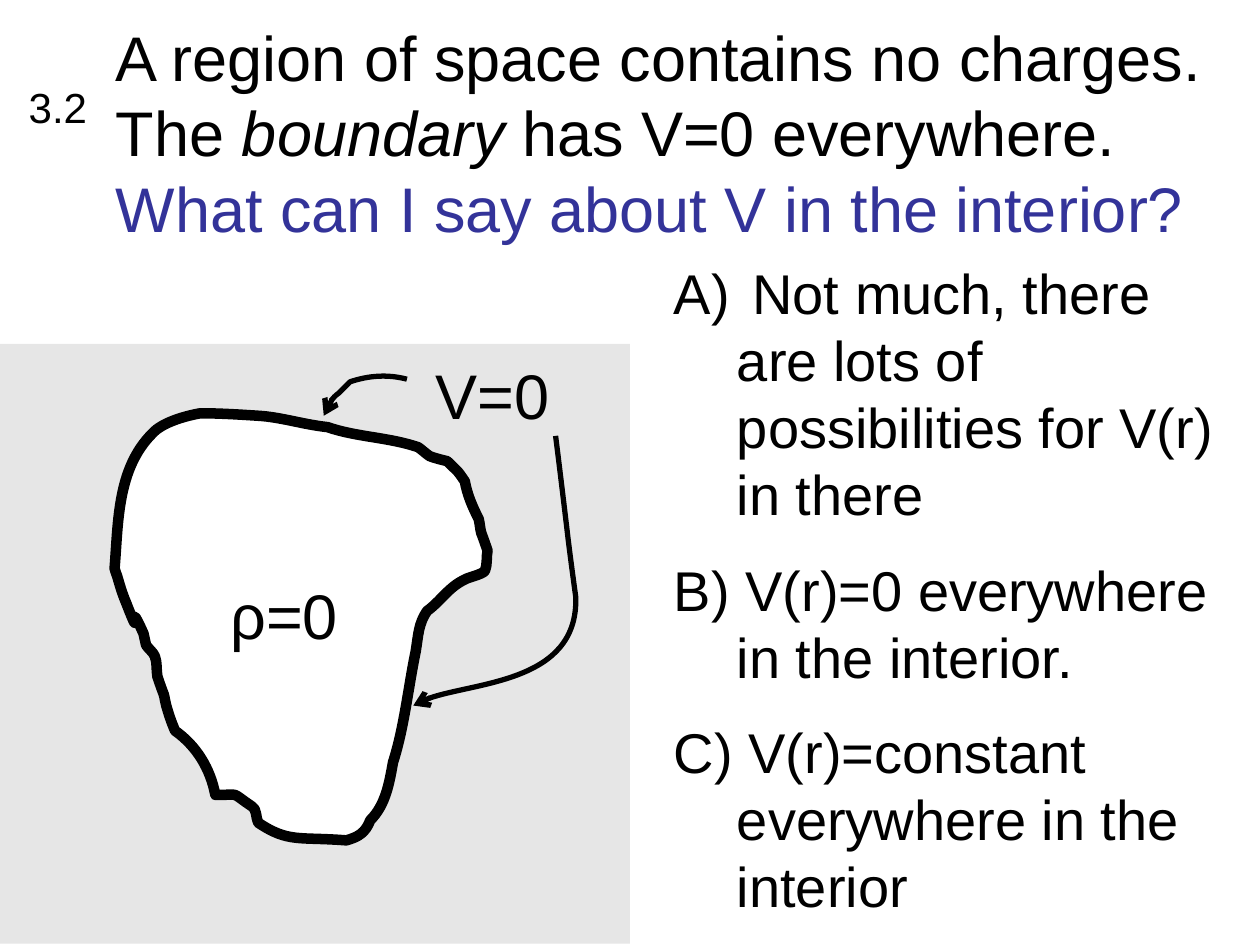
from lxml import etree
from pptx import Presentation
from pptx.dml.color import RGBColor
from pptx.enum.shapes import MSO_SHAPE
from pptx.enum.text import MSO_ANCHOR, MSO_AUTO_SIZE, PP_ALIGN
from pptx.oxml.ns import qn
from pptx.util import Inches, Pt

RECT = MSO_SHAPE.RECTANGLE
TOP, MIDDLE = MSO_ANCHOR.TOP, MSO_ANCHOR.MIDDLE
NO_FIT, LEFT = MSO_AUTO_SIZE.NONE, PP_ALIGN.LEFT

HUES = {"ink": "000000", "ask": "333399", "wall": "C0C0C0", "space": "FFFFFF"}

# Content: each paragraph is a list of (text, format) runs
TITLE = [[("A region of space contains no charges. The ", {}),
          ("boundary", {"italic": True}),
          (" has V=0 everywhere.\n", {}),
          ("What can I say about V in the interior?", {"hue": "ask"})]]
CHOICES = [[(" Not much, there are lots of possibilities for V(r) in there", {})],
           [("B) V(r)=0 everywhere in the interior.", {})],
           [("C) V(r)=constant \neverywhere in the interior", {})]]
LABELS = [  # text, box, format
    ("3.2", (0.13, 0.6, 0.87, 0.5), {"size": 24}),
    ("V=0", (3.36, 2.78, 1.1, 0.7), {"wrap": False}),
    ("ρ=0", (1.73, 4.53, 1.18, 1.3), {"wrap": False}),
]

# Curves: a start point, then two handles and an end point per row
REGION = [
    (1.71, 6.31),
    (1.67, 6.1), (1.56, 5.92), (1.39, 5.8),
    (1.36, 5.73), (1.34, 5.67), (1.32, 5.6),
    (1.31, 5.57), (1.31, 5.54), (1.3, 5.51),
    (1.28, 5.46), (1.25, 5.37), (1.25, 5.37),
    (1.24, 5.32), (1.25, 5.26), (1.23, 5.21),
    (1.22, 5.18), (1.18, 5.15), (1.16, 5.12),
    (1.15, 5.09), (1.15, 5.06), (1.14, 5.03),
    (0.98, 4.67), (1.16, 5.19), (1, 4.78),
    (0.97, 4.71), (0.95, 4.64), (0.93, 4.57),
    (0.92, 4.55), (0.91, 4.51), (0.91, 4.51),
    (0.94, 4.14), (0.93, 3.72), (1.21, 3.44),
    (1.29, 3.35), (1.48, 3.3), (1.59, 3.28),
    (1.74, 3.28), (1.9, 3.29), (2.05, 3.3),
    (2.23, 3.31), (2.41, 3.37), (2.6, 3.39),
    (2.83, 3.47), (3.09, 3.47), (3.32, 3.55),
    (3.35, 3.57), (3.38, 3.6), (3.41, 3.62),
    (3.46, 3.64), (3.55, 3.66), (3.55, 3.66),
    (3.66, 3.77), (3.62, 3.72), (3.69, 3.82),
    (3.71, 3.93), (3.75, 4.02), (3.8, 4.12),
    (3.81, 4.16), (3.81, 4.19), (3.82, 4.23),
    (3.84, 4.28), (3.87, 4.37), (3.87, 4.37),
    (3.86, 4.42), (3.87, 4.48), (3.85, 4.53),
    (3.83, 4.56), (3.72, 4.58), (3.69, 4.6),
    (3.56, 4.66), (3.5, 4.77), (3.39, 4.85),
    (3.32, 4.95), (3.32, 5.05), (3.3, 5.17),
    (3.24, 5.46), (3.21, 5.77), (3.12, 6.05),
    (3.09, 6.22), (3.06, 6.39), (2.94, 6.51),
    (2.9, 6.61), (2.85, 6.64), (2.75, 6.67),
    (2.37, 6.64), (2.29, 6.69), (2.05, 6.53),
    (2.03, 6.49), (2.04, 6.42), (2, 6.4),
    (1.82, 6.28), (1.92, 6.31), (1.71, 6.31),
]
ARROWS = [
    [(3.23, 3.01),
     (3.08, 2.97), (2.93, 2.98), (2.78, 3.03),
     (2.75, 3.06), (2.72, 3.09), (2.69, 3.12),
     (2.66, 3.14), (2.62, 3.19), (2.62, 3.19),
     (2.59, 3.27), (2.61, 3.23), (2.57, 3.3)],
    [(4.41, 3.46),
     (4.44, 3.7), (4.47, 3.95), (4.5, 4.2),
     (4.52, 4.38), (4.57, 4.74), (4.57, 4.74),
     (4.59, 5.42), (3.55, 5.42), (3.28, 5.6)],
]


def color(name):
    return RGBColor.from_string(HUES[name])


def write(shape, paras, size=36, wrap=True, anchor=TOP, before=0, indent=0):
    """Fill a shape with paragraphs of formatted runs."""
    frame = shape.text_frame
    frame.word_wrap, frame.auto_size = wrap, NO_FIT
    frame.vertical_anchor = anchor
    for i, runs in enumerate(paras):
        para = frame.paragraphs[0] if i == 0 else frame.add_paragraph()
        para.alignment, para.space_before = LEFT, Pt(before)
        if indent:
            props = para._p.get_or_add_pPr()
            props.set("marL", str(Inches(indent)))
            props.set("indent", str(-Inches(indent)))
        for text, style in runs:
            for j, part in enumerate(text.split("\n")):
                if j:
                    para.add_line_break()
                if not part:
                    continue
                run = para.add_run()
                run.text = part
                run.font.name, run.font.size = "Arial", Pt(size)
                run.font.italic = style.get("italic", False)
                run.font.color.rgb = color(style.get("hue", "ink"))


def text_box(box, paras, **style):
    shape = slide.shapes.add_textbox(*map(Inches, box))
    write(shape, paras, **style)
    return shape


def curve(points, width, fill=None):
    """Draw Bezier curves; a filled one is closed, an open one gets an arrow."""
    start, *rest = [(Inches(x), Inches(y)) for x, y in points]
    pen = slide.shapes.build_freeform(*start)
    pen.add_line_segments(rest, close=bool(fill))
    shape = pen.convert_to_shape()
    shape.shadow.inherit = False
    shape.line.color.rgb, shape.line.width = color("ink"), Pt(width)

    # Join each three line steps into one cubic step
    route = shape._element.find(".//" + qn("a:path"))
    steps = route.findall(qn("a:lnTo"))[:len(rest)]
    for i in range(0, len(steps), 3):
        cubic = etree.Element(qn("a:cubicBezTo"))
        steps[i].addprevious(cubic)
        for step in steps[i:i + 3]:
            cubic.append(step[0])
            route.remove(step)

    if fill:
        shape.fill.solid()
        shape.fill.fore_color.rgb = color(fill)
    else:
        shape.fill.background()
        line = shape.line._get_or_add_ln()
        etree.SubElement(line, qn("a:tailEnd"), type="arrow")


deck = Presentation()
deck.slide_width, deck.slide_height = Inches(10), Inches(7.5)
slide = deck.slides.add_slide(deck.slide_layouts[5])

# Wall around the region
wall = slide.shapes.add_shape(RECT, *map(Inches, (0, 2.73, 5, 4.76)))
wall.shadow.inherit = False
wall.line.fill.background()
wall.fill.solid()
wall.fill.fore_color.rgb = color("wall")
tint = wall._element.find(".//" + qn("a:srgbClr"))
etree.SubElement(tint, qn("a:alpha"), val="39000")

# Title
title = slide.shapes.title
title.left, title.top, title.width, title.height = map(Inches, (0.82, 0.42, 9, 1.25))
write(title, TITLE, anchor=MIDDLE)

# Region and arrows to its boundary
curve(REGION, 6, fill="space")
for points in ARROWS:
    curve(points, 3)

# Labels
for text, box, style in LABELS:
    text_box(box, [[(text, {})]], **style)

# Choices, the first lettered by the list
choices = text_box((5.25, 2, 4.48, 5.43), CHOICES, size=32, before=16, indent=0.5)
first = choices.text_frame.paragraphs[0]._p.get_or_add_pPr()
etree.SubElement(first, qn("a:buFont"), typeface="Arial")
etree.SubElement(first, qn("a:buAutoNum"), type="alphaUcParenR")

deck.save("out.pptx")
